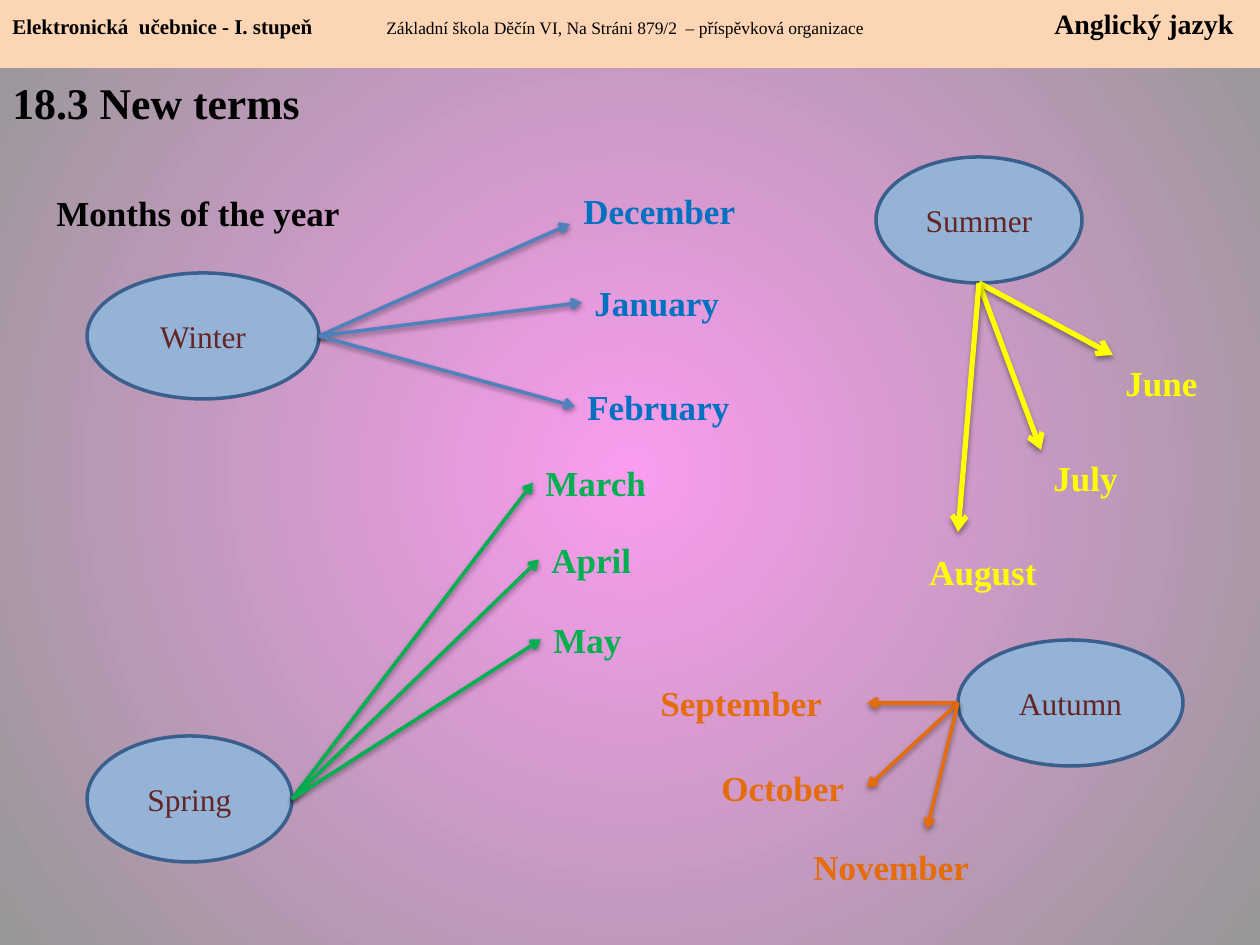
"""Build a slide that links the four seasons to their months."""
from lxml.etree import SubElement
from pptx import Presentation
from pptx.dml.color import RGBColor
from pptx.enum.shapes import MSO_CONNECTOR, MSO_SHAPE
from pptx.enum.text import MSO_ANCHOR, MSO_AUTO_SIZE, PP_ALIGN
from pptx.oxml.ns import qn
from pptx.util import Pt

SCALE = 914400 / 126
WIDTH, HEIGHT = 1260, 945
LABEL_HEIGHT = 55
OVAL_HEIGHT = 126
LEFT, RIGHT = 1, 3
COLORS = {
    "centre": "FA9CEF", "edge": "979797", "band": "FCD5B5", "text": "000000",
    "oval": "95B3D7", "outline": "3A5F8C", "season": "632523",
    "winter text": "0070C0", "winter line": "4F81BD", "spring": "00B050",
    "summer": "FFFF00", "autumn": "E46C0A",
}
SEASONS = [
    ("Winter", (87, 273, 232), (319, 336), "winter text", "winter line", 2, [
        ("December", (571, 183, 186), (570, 224)),
        ("January", (582, 275, 160), LEFT),
        ("February", (575, 379, 178), LEFT)]),
    ("Spring", (87, 736, 205), (292, 799), "spring", "spring", 2, [
        ("March", (533, 455, 127), LEFT),
        ("April", (539, 532, 115), LEFT),
        ("May", (541, 612, 103), LEFT)]),
    ("Autumn", (958, 640, 225), (958, 703), "autumn", "autumn", 2, [
        ("September", (648, 675, 197), (867, 703)),
        ("October", (709, 760, 158), RIGHT),
        ("November", (801, 839, 190), (927, 829))]),
    ("Summer", (876, 157, 206), (979, 283), "summer", "summer", 3, [
        ("June", (1113, 355, 107), (1113, 355)),
        ("July", (1041, 450, 100), (1041, 450)),
        ("August", (917, 544, 142), (958, 532))]),
]


def px(*lengths):
    return [round(length * SCALE) for length in lengths]


def color(name):
    return RGBColor.from_string(COLORS[name])


class SeasonPage:
    """Hold the type style and the current slide."""

    def __init__(self, page, font="Times New Roman"):
        self.page = page
        self.font = font

    def background(self):
        fill = self.page.background.fill
        fill.gradient()
        for stop, name in zip(fill.gradient_stops, ("centre", "edge")):
            stop.color.rgb = color(name)
        for stop, position in zip(fill.gradient_stops, (0, 1)):
            stop.position = position
        gradient = self.page.element.xpath(".//a:gradFill")[0]
        gradient.remove(gradient.find(qn("a:lin")))
        circle = SubElement(gradient, qn("a:path"), path="circle")
        SubElement(circle, qn("a:fillToRect"), l="50000", t="50000", r="50000", b="50000")

    def span(self, para, text, size, name="text", bold=True):
        span = para.add_run()
        span.text = text
        span.font.name = self.font
        span.font.size = Pt(size)
        span.font.bold = bold
        span.font.color.rgb = color(name)

    def label(self, text, bounds, size=20, name="text", wrap=False):
        box = self.page.shapes.add_textbox(*px(*bounds))
        box.text_frame.word_wrap = wrap
        self.span(box.text_frame.paragraphs[0], text, size, name)
        return box

    def shape(self, kind, bounds, fill, outline=None):
        shape = self.page.shapes.add_shape(kind, *px(*bounds))
        shape.shadow.inherit = False
        shape.fill.solid()
        shape.fill.fore_color.rgb = color(fill)
        if outline:
            shape.line.color.rgb = color(outline)
            shape.line.width = Pt(2)
        else:
            shape.line.fill.background()
        return shape

    def band(self, bounds, spans, tabs):
        frame = self.shape(MSO_SHAPE.RECTANGLE, bounds, "band").text_frame
        frame.word_wrap = True
        frame.auto_size = MSO_AUTO_SIZE.SHAPE_TO_FIT_TEXT
        frame.vertical_anchor = MSO_ANCHOR.TOP
        para = frame.paragraphs[0]
        para.alignment = PP_ALIGN.LEFT
        stops = SubElement(para._p.get_or_add_pPr(), qn("a:tabLst"))
        for position in px(*tabs):
            SubElement(stops, qn("a:tab"), pos=str(position), algn="l")
        for text, size, bold in spans:
            self.span(para, text, size, bold=bold)

    def oval(self, text, bounds):
        frame = self.shape(MSO_SHAPE.OVAL, bounds, "oval", "outline").text_frame
        frame.vertical_anchor = MSO_ANCHOR.MIDDLE
        para = frame.paragraphs[0]
        para.alignment = PP_ALIGN.CENTER
        self.span(para, text, 18, "season", bold=False)

    def arrow(self, start, end, box, name, weight):
        joined = end in (LEFT, RIGHT)
        tip = start if joined else end
        arrow = self.page.shapes.add_connector(MSO_CONNECTOR.STRAIGHT, *px(*start, *tip))
        if joined:
            arrow.end_connect(box, end)
        arrow.line.color.rgb = color(name)
        arrow.line.width = Pt(weight)
        SubElement(arrow.line._get_or_add_ln(), qn("a:tailEnd"), type="arrow")
        effects = SubElement(arrow._element.spPr, qn("a:effectLst"))
        shadow = SubElement(effects, qn("a:outerShdw"), blurRad=str(Pt(3.1)),
                            dist=str(Pt(1.6)), dir="5400000", rotWithShape="0")
        black = SubElement(shadow, qn("a:srgbClr"), val=COLORS["text"])
        SubElement(black, qn("a:alpha"), val="38000")


def main():
    deck = Presentation()
    deck.slide_width, deck.slide_height = px(WIDTH, HEIGHT)
    sheet = SeasonPage(deck.slides.add_slide(deck.slide_layouts[6]))
    sheet.background()
    sheet.label("18.3 New terms", (0, 70, WIDTH, 67), size=25, wrap=True)
    sheet.band((0, 0, WIDTH, 68), [
        ("Elektronická  učebnice - I. stupeň\t", 12, True),
        ("Základní škola Děčín VI, Na Stráni 879/2  – příspěvková organizace\t", 10, False),
        ("Anglický jazyk", 16, True)], tabs=(374, 1042))
    sheet.label("Months of the year", (44, 185, 311, LABEL_HEIGHT))
    for season, bounds, start, ink, stroke, weight, months in SEASONS:
        sheet.oval(season, (*bounds, OVAL_HEIGHT))
        for month, place, end in months:
            box = sheet.label(month, (*place, LABEL_HEIGHT), name=ink)
            sheet.arrow(start, end, box, stroke, weight)
    deck.save("out.pptx")


if __name__ == "__main__":
    main()
